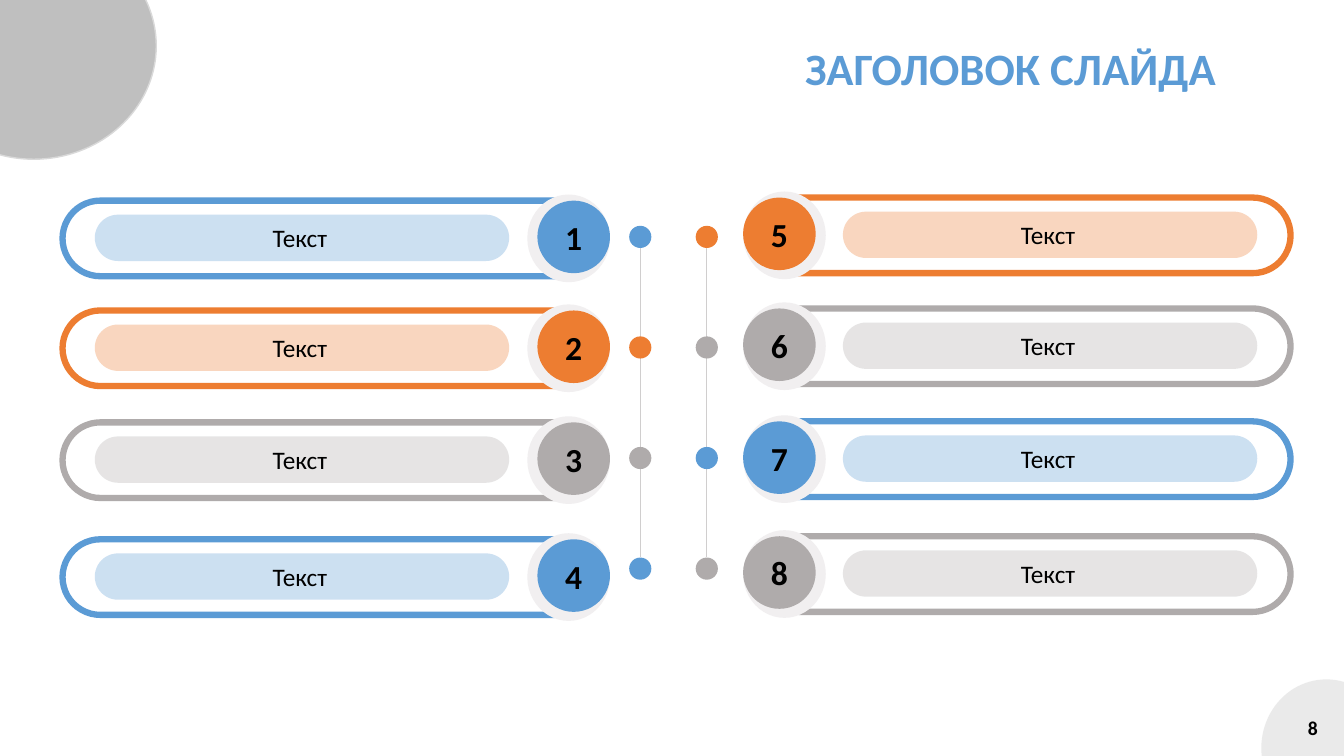
from dataclasses import dataclass

from lxml import etree
from pptx import Presentation
from pptx.dml.color import RGBColor
from pptx.enum import shapes, text
from pptx.oxml import ns
from pptx.util import Inches, Pt


@dataclass(frozen=True)
class Theme:
    font: str = "Calibri"
    blue: str = "5B9BD5"
    orange: str = "ED7D31"
    gray: str = "AFABAB"
    halo: str = "F1EFF0"
    thread: str = "D0CECE"
    corner: str = "BFBFBF"
    corner_edge: str = "D9D9D9"
    ink: str = "000000"
    title_size: int = 32
    number_size: int = 24
    label_size: int = 18
    page_size: int = 14
    frame_width: float = 4.5
    pill_alpha: int = 31
    page_alpha: int = 53


THEME = Theme()
TITLE = "ЗАГОЛОВОК СЛАЙДА"
PAGE = "8"

# Each item: number, label, colour, top of its frame
LEFT_ITEMS = [
    ("1", "Текст", THEME.blue, 1.99),
    ("2", "Текст", THEME.orange, 3.08),
    ("3", "Текст", THEME.gray, 4.19),
    ("4", "Текст", THEME.blue, 5.35),
]
RIGHT_ITEMS = [
    ("5", "Текст", THEME.orange, 1.96),
    ("6", "Текст", THEME.gray, 3.06),
    ("7", "Текст", THEME.blue, 4.18),
    ("8", "Текст", THEME.gray, 5.32),
]

# Left edges of the parts in each column
COLUMNS = [
    (LEFT_ITEMS, {"frame": 0.62, "pill": 0.94, "halo": 5.23, "badge": 5.33, "dot": 6.24}),
    (RIGHT_ITEMS, {"frame": 7.55, "pill": 8.36, "halo": 7.37, "badge": 7.37, "dot": 6.9}),
]
DOT_SIZE, DOT_TOP, DOT_STEP = 0.22, 2.24, 1.097

OVAL = shapes.MSO_SHAPE.OVAL
ROUNDED = shapes.MSO_SHAPE.ROUNDED_RECTANGLE

prs = Presentation()
prs.slide_width, prs.slide_height = Inches(13.33), Inches(7.5)
slide = prs.slides.add_slide(prs.slide_layouts[6])


def add_form(kind, box, fill=None, alpha=None, line=None, line_width=1):
    """Add a flat shape; alpha is the fill's opacity in percent."""
    form = slide.shapes.add_shape(kind, *map(Inches, box))
    form.shadow.inherit = False
    if kind == ROUNDED:
        form.adjustments[0] = 0.5
    if fill:
        form.fill.solid()
        form.fill.fore_color.rgb = RGBColor.from_string(fill)
    else:
        form.fill.background()
    if alpha:
        color = form.fill._xPr.find(ns.qn("a:solidFill"))[0]
        etree.SubElement(color, ns.qn("a:alpha")).set("val", str(alpha * 1000))
    if line:
        form.line.color.rgb = RGBColor.from_string(line)
        form.line.width = Pt(line_width)
    else:
        form.line.fill.background()
    return form


def write(holder, words, size, color=THEME.ink, bold=False,
          align=text.PP_ALIGN.CENTER, anchor=text.MSO_ANCHOR.MIDDLE):
    frame = holder.text_frame
    frame.word_wrap = True
    frame.vertical_anchor = anchor
    paragraph = frame.paragraphs[0]
    paragraph.text = words
    paragraph.alignment = align
    paragraph.font.name = THEME.font
    paragraph.font.size = Pt(size)
    paragraph.font.bold = bold
    paragraph.font.color.rgb = RGBColor.from_string(color)
    return paragraph


def add_text(box, *args, **kwargs):
    return write(slide.shapes.add_textbox(*map(Inches, box)), *args, **kwargs)


def add_dots(items, left):
    """Draw a column of dots strung on a thin vertical thread."""
    center = Inches(left + DOT_SIZE / 2)
    bottom = DOT_TOP + DOT_STEP * (len(items) - 1)
    thread = slide.shapes.add_connector(
        shapes.MSO_CONNECTOR.STRAIGHT,
        center, Inches(DOT_TOP + DOT_SIZE), center, Inches(bottom))
    thread.line.color.rgb = RGBColor.from_string(THEME.thread)
    thread.line.width = Pt(0.5)
    etree.SubElement(thread._element.spPr, ns.qn("a:effectLst"))
    for row, (_, _, color, _) in enumerate(items):
        add_form(OVAL, (left, DOT_TOP + row * DOT_STEP, DOT_SIZE, DOT_SIZE), color)


def add_item(item, lefts):
    number, label, color, top = item
    add_form(ROUNDED, (lefts["frame"], top, 5.25, 0.75),
             line=color, line_width=THEME.frame_width)
    add_form(ROUNDED, (lefts["pill"], top + 0.14, 4.11, 0.46), color, THEME.pill_alpha)
    add_form(OVAL, (lefts["halo"], top - 0.06, 0.82, 0.87), THEME.halo)
    badge = add_form(OVAL, (lefts["badge"], top, 0.72, 0.72), color)
    write(badge, number, THEME.number_size, bold=True)
    add_text((lefts["pill"], top + 0.17, 4.07, 0.4), label, THEME.label_size,
             anchor=text.MSO_ANCHOR.TOP)


add_form(OVAL, (12.51, 6.74, 1.29, 1.36), THEME.corner_edge, THEME.page_alpha)
add_text((10.17, 7.02, 3, 0.4), PAGE, THEME.page_size, bold=True,
         align=text.PP_ALIGN.RIGHT)
add_form(OVAL, (-0.88, -0.67, 2.43, 2.25), THEME.corner, line=THEME.corner_edge)

for items, lefts in COLUMNS:
    add_dots(items, lefts["dot"])
    for item in items:
        add_item(item, lefts)

title = add_text((4.14, 0.4, 8.02, 0.65), TITLE, THEME.title_size, THEME.blue,
                 bold=True, align=text.PP_ALIGN.RIGHT)
title.line_spacing = 0.75

prs.save("out.pptx")
